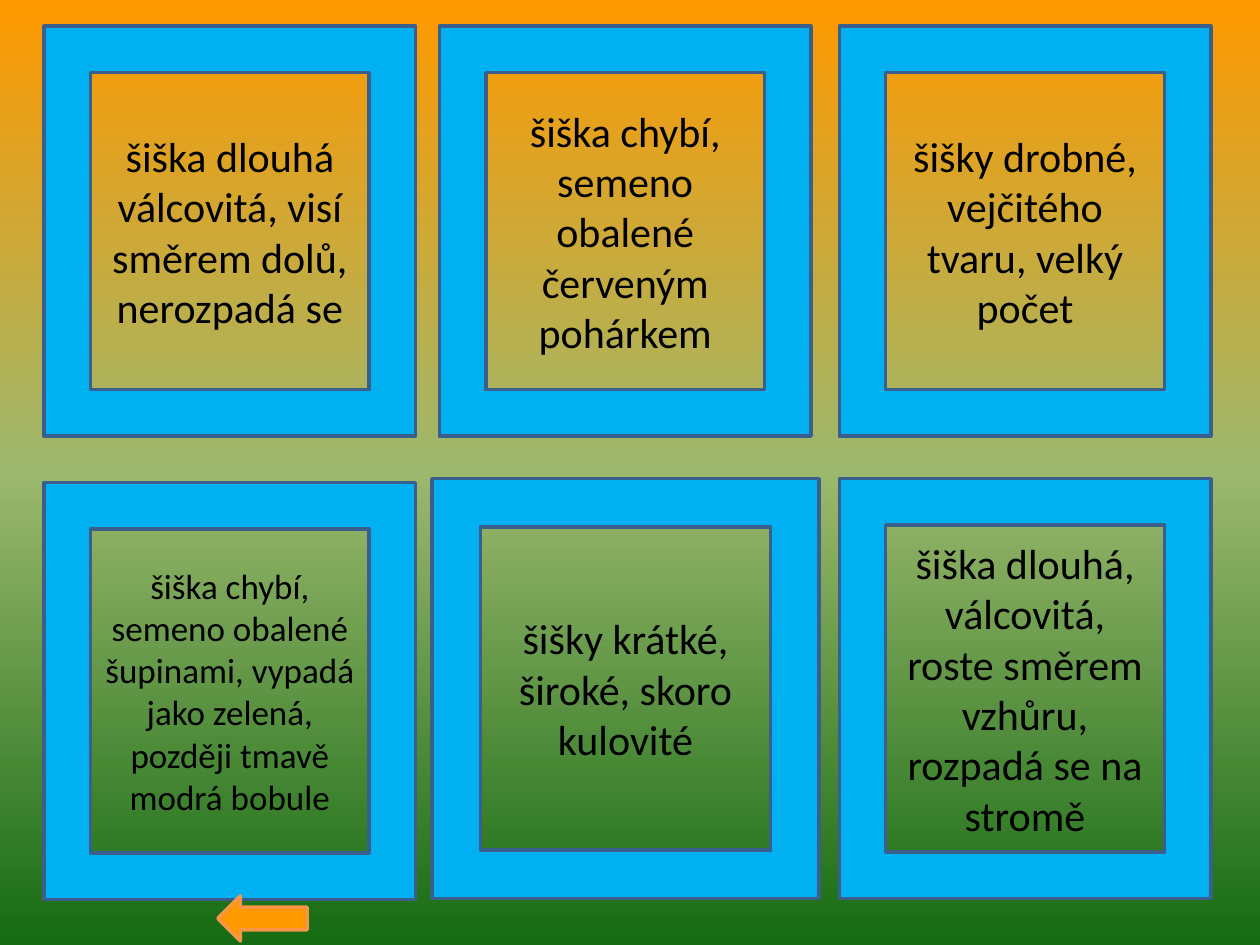
import copy
from dataclasses import dataclass

import pptx
import pptx.dml.color
import pptx.enum.shapes
import pptx.enum.text
import pptx.oxml.ns
import pptx.presentation
import pptx.shapes.autoshape
import pptx.slide
import pptx.util

Cm = pptx.util.Cm
Pt = pptx.util.Pt
ShapeKind = pptx.enum.shapes.MSO_SHAPE

SKY = ((0, "FF9900"), (0.5, "9CB86E"), (1, "156B13"))
LEFT, RIGHT = 0.89, 16.92
TOP = 0.53
WIDTH, TOP_HEIGHT = 7.49, 8.26


@dataclass(frozen=True)
class ConeCard:
    left: float
    top: float
    width: float
    height: float
    description: str
    size: int = 24


CARDS = (
    ConeCard(LEFT, TOP, WIDTH, TOP_HEIGHT,
             "šiška dlouhá válcovitá, visí směrem dolů, nerozpadá se"),
    ConeCard(RIGHT, 9.65, WIDTH, 8.46,
             "šiška dlouhá, válcovitá, roste směrem vzhůru, rozpadá se na stromě"),
    ConeCard(8.71, 9.65, 7.8, 8.46, "šišky krátké, široké, skoro kulovité"),
    ConeCard(LEFT, 9.73, WIDTH, 8.4,
             "šiška chybí, semeno obalené šupinami, vypadá jako zelená, "
             "později tmavě modrá bobule", 20),
    ConeCard(RIGHT, TOP, WIDTH, TOP_HEIGHT,
             "šišky drobné, vejčitého tvaru, velký počet"),
    ConeCard(8.86, TOP, WIDTH, TOP_HEIGHT,
             "šiška chybí, semeno obalené červeným pohárkem"),
)


def color(value: str) -> pptx.dml.color.RGBColor:
    return pptx.dml.color.RGBColor.from_string(value)


def paint_background(slide: pptx.slide.Slide) -> None:
    fill = slide.background.fill
    fill.gradient()
    fill.gradient_angle = 270
    stops = slide.element.find(".//" + pptx.oxml.ns.qn("a:gsLst"))
    stops.append(copy.deepcopy(stops[0]))
    for stop, (position, shade) in zip(fill.gradient_stops, SKY):
        stop.position = position
        stop.color.rgb = color(shade)


def style(shape: pptx.shapes.autoshape.Shape, fill: str, outline: str) -> None:
    shape.shadow.inherit = False
    shape.fill.solid()
    shape.fill.fore_color.rgb = color(fill)
    shape.line.color.rgb = color(outline)
    shape.line.width = Pt(2)


def draw_card(slide: pptx.slide.Slide, card: ConeCard) -> None:
    frame = slide.shapes.add_shape(
        ShapeKind.FRAME, Cm(card.left), Cm(card.top), Cm(card.width), Cm(card.height)
    )
    style(frame, "00B0F0", "3A5F8C")
    text = frame.text_frame
    text.word_wrap = True
    text.vertical_anchor = pptx.enum.text.MSO_ANCHOR.MIDDLE
    paragraph = text.paragraphs[0]
    paragraph.alignment = pptx.enum.text.PP_ALIGN.CENTER
    run = paragraph.add_run()
    run.text = card.description
    run.font.name = "Calibri"
    run.font.size = Pt(card.size)
    run.font.color.rgb = color("000000")


def draw_back_arrow(slide: pptx.slide.Slide) -> None:
    arrow = slide.shapes.add_shape(
        ShapeKind.RIGHT_ARROW, Cm(4.39), Cm(18.06), Cm(1.8), Cm(0.91)
    )
    arrow.rotation = 180
    style(arrow, "FF9900", "F79646")


def main() -> None:
    presentation = pptx.Presentation()
    presentation.slide_width = Cm(25.4)
    presentation.slide_height = Cm(19.05)
    slide = presentation.slides.add_slide(presentation.slide_layouts[6])
    paint_background(slide)
    for card in CARDS:
        draw_card(slide, card)
    draw_back_arrow(slide)
    presentation.save("out.pptx")


if __name__ == "__main__":
    main()
